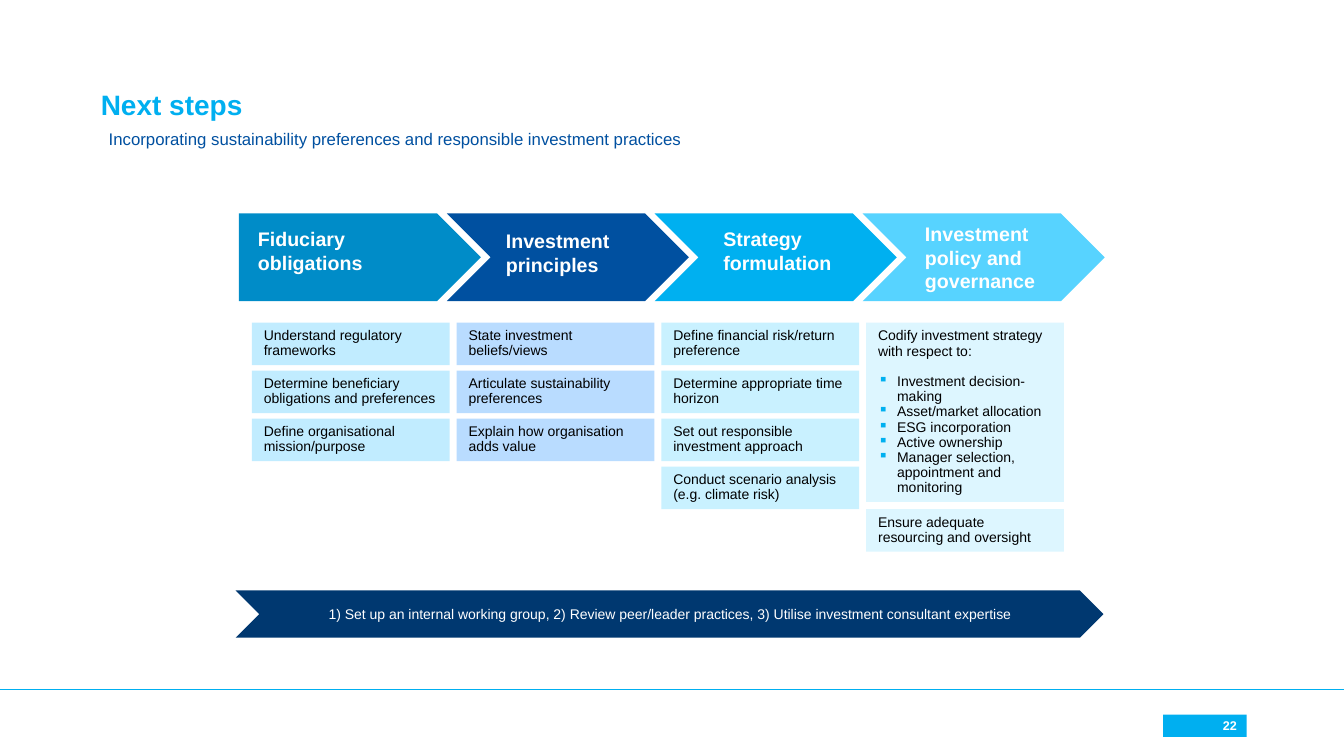
import pptx
import pptx.util
import pptx.dml.color
import pptx.enum.shapes
import pptx.enum.text
import lxml.etree
import pptx.oxml.ns

Cm = pptx.util.Cm
Pt = pptx.util.Pt
RGBColor = pptx.dml.color.RGBColor
Kind = pptx.enum.shapes.MSO_SHAPE
Anchor = pptx.enum.text.MSO_ANCHOR
Align = pptx.enum.text.PP_ALIGN
qn = pptx.oxml.ns.qn

CYAN = RGBColor(0x00, 0xAF, 0xF0)
SKY = RGBColor(0x00, 0xB0, 0xF0)
BLUE = RGBColor(0x00, 0x50, 0xA0)
TEAL = RGBColor(0x00, 0x8C, 0xC8)
LIGHT = RGBColor(0x57, 0xD3, 0xFF)
NAVY = RGBColor(0x00, 0x38, 0x70)
WHITE = RGBColor(0xFF, 0xFF, 0xFF)
BLACK = RGBColor(0x00, 0x00, 0x00)
PALE_TEAL = RGBColor(0xC1, 0xEC, 0xFF)
PALE_BLUE = RGBColor(0xB9, 0xDC, 0xFF)
PALE_SKY = RGBColor(0xC9, 0xF1, 0xFF)
PALE_LIGHT = RGBColor(0xDD, 0xF6, 0xFF)

# Arrow colour, then label text and its left, top, width and height in cm
STAGES = [
    (TEAL, "Fiduciary obligations", (6.25, 5.59, 4.7, 1.45)),
    (BLUE, "Investment principles", (12.5, 5.64, 4.34, 1.45)),
    (SKY, "Strategy formulation", (17.98, 5.59, 4.29, 1.45)),
    (LIGHT, "Investment policy and governance", (23.06, 5.44, 4.32, 2.06)),
]
CODIFY = "Codify investment strategy with respect to:"
TOPICS = [
    "Investment decision-making",
    "Asset/market allocation",
    "ESG incorporation",
    "Active ownership",
    "Manager selection, appointment and monitoring",
]
# Card colour, gap between cards in cm, card texts
COLUMNS = [
    (PALE_TEAL, 0.14, ["Understand regulatory frameworks",
                       "Determine beneficiary obligations and preferences",
                       "Define organisational mission/purpose"]),
    (PALE_BLUE, 0.14, ["State investment beliefs/views",
                       "Articulate sustainability preferences",
                       "Explain how organisation adds value"]),
    (PALE_SKY, 0.14, ["Define financial risk/return preference",
                      "Determine appropriate time horizon",
                      "Set out responsible investment approach",
                      "Conduct scenario analysis (e.g. climate risk)"]),
    (PALE_LIGHT, 0.18, [CODIFY, "Ensure adequate resourcing and oversight"]),
]


def add_run(para, text, size, color, bold=False):
    run = para.add_run()
    run.text = text
    run.font.name = "Arial"
    run.font.size = Pt(size)
    run.font.bold = bold
    run.font.color.rgb = color


def add_text(slide, area, text, size, color, bold=False, anchor=Anchor.BOTTOM, line=1.0):
    frame = slide.shapes.add_textbox(*map(Cm, area)).text_frame
    frame.word_wrap = True
    frame.vertical_anchor = anchor
    para = frame.paragraphs[0]
    para.line_spacing = line
    add_run(para, text, size, color, bold)


def add_block(slide, kind, area, fill):
    shape = slide.shapes.add_shape(kind, *map(Cm, area))
    shape.shadow.inherit = False
    shape.fill.solid()
    shape.fill.fore_color.rgb = fill
    shape.line.fill.background()
    shape.text_frame.vertical_anchor = Anchor.MIDDLE
    return shape


def add_bullet(para):
    props = para._p.get_or_add_pPr()
    props.set("marL", str(Cm(0.48)))
    props.set("indent", str(-Cm(0.48)))
    color = lxml.etree.SubElement(props, qn("a:buClr"))
    lxml.etree.SubElement(color, qn("a:srgbClr")).set("val", str(SKY))
    lxml.etree.SubElement(props, qn("a:buChar")).set("char", "▪")


def add_card(slide, area, fill, text, topics):
    frame = add_block(slide, Kind.RECTANGLE, area, fill).text_frame
    frame.margin_left = frame.margin_right = Cm(0.3)
    frame.margin_top = frame.margin_bottom = Cm(0.13)
    for index, words in enumerate([text] + topics):
        para = frame.add_paragraph() if index else frame.paragraphs[0]
        if index:
            add_bullet(para)
        if index == 1:
            para.space_before = Pt(11)
        para.alignment = Align.LEFT
        para.line_spacing = 0.9
        add_run(para, words, 10, BLACK)


def add_column(slide, left, fill, gap, texts):
    top = 8.13
    for text in texts:
        topics = TOPICS if text == CODIFY else []
        height = 4.52 if topics else 1.07
        add_card(slide, (left, top, 4.98, height), fill, text, topics)
        top += height + gap


def add_footer(slide, width):
    line = slide.shapes.add_connector(
        pptx.enum.shapes.MSO_CONNECTOR.STRAIGHT, 0, Cm(17.37), width, Cm(17.37))
    line.line.color.rgb = CYAN
    line.line.width = Pt(0.5)
    lxml.etree.SubElement(line._element.spPr, qn("a:effectLst"))
    badge = add_block(slide, Kind.RECTANGLE, (29.31, 18.01, 2.11, 0.56), CYAN)
    para = badge.text_frame.paragraphs[0]
    para.alignment = Align.RIGHT
    add_run(para, "22", 9, WHITE, True)


def main():
    deck = pptx.Presentation()
    deck.slide_width = Cm(33.87)
    deck.slide_height = Cm(19.05)
    slide = deck.slides.add_slide(deck.slide_layouts[6])

    add_footer(slide, deck.slide_width)
    add_text(slide, (2.29, 1.8, 29.11, 1.4), "Next steps", 20, CYAN, True, line=0.9)
    add_text(slide, (2.49, 3.18, 21.84, 1.17),
             "Incorporating sustainability preferences and responsible investment practices",
             12, BLUE, anchor=Anchor.TOP, line=0.9)

    for index, (fill, label, area) in enumerate(STAGES):
        kind = Kind.CHEVRON if index else Kind.PENTAGON
        add_block(slide, kind, (6.02 + index * 5.24, 5.38, 6.1, 2.21), fill)
        add_text(slide, area, label, 14, WHITE, True)
    for index, column in enumerate(COLUMNS):
        add_column(slide, 6.35 + index * 5.16, *column)

    banner = add_block(slide, Kind.CHEVRON, (5.94, 14.88, 21.87, 1.19), NAVY)
    para = banner.text_frame.paragraphs[0]
    para.alignment = Align.CENTER
    add_run(para, "1) Set up an internal working group, 2) Review peer/leader practices, "
            "3) Utilise investment consultant expertise", 10, WHITE)

    deck.save("out.pptx")


if __name__ == "__main__":
    main()
